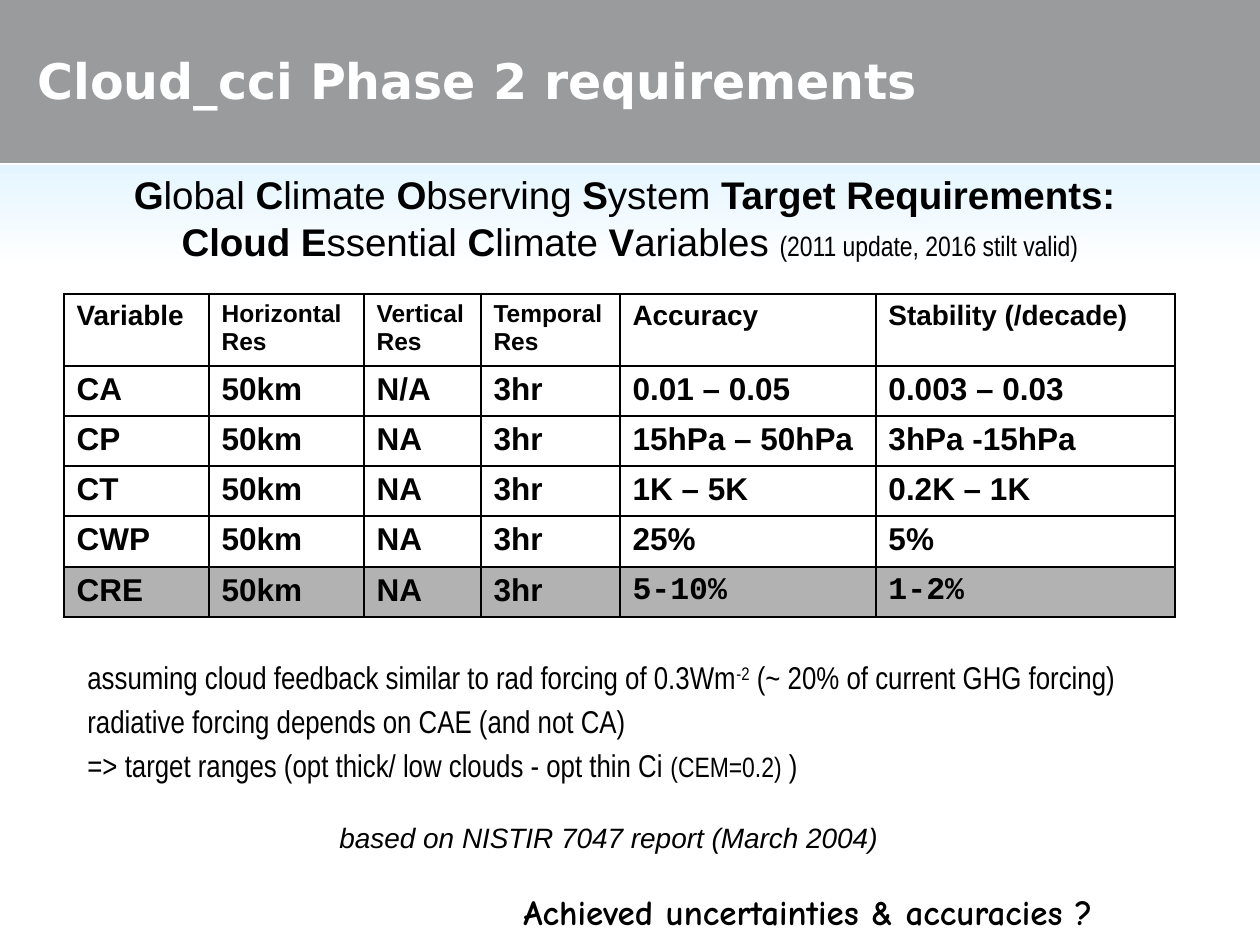
from lxml.etree import SubElement
from pptx import Presentation
from pptx.dml.color import RGBColor
from pptx.enum.shapes import MSO_SHAPE as SHAPE
from pptx.enum.text import MSO_ANCHOR as ANCHOR, PP_ALIGN as ALIGN
from pptx.oxml.ns import qn
from pptx.util import Pt

SCALE = 914400 / 126


def px(*values):
    return [round(v * SCALE) for v in values]


def add_run(p, text, size=18, font="Arial", color="000000", bold=False, italic=False, sup=False):
    r = p.add_run()
    r.text = text
    f = r.font
    f.size, f.name, f.bold, f.italic = Pt(size), font, bold, italic
    f.color.rgb = RGBColor.from_string(color)
    if sup:
        r._r.get_or_add_rPr().set("baseline", "30000")


prs = Presentation()
prs.slide_width, prs.slide_height = px(1260, 945)
s = prs.slides.add_slide(prs.slide_layouts[5])

band = s.shapes.add_shape(SHAPE.RECTANGLE, *px(0, 0, 1260, 163))
band.fill.solid()
band.fill.fore_color.rgb = RGBColor.from_string("9A9B9C")

header = s.shapes.add_shape(SHAPE.RECTANGLE, *px(0, 165, 1260, 105))
header.fill.gradient()
header.fill.gradient_angle = 270
for stop, color in zip(header.fill.gradient_stops, ["E5F5FF", "FFFFFF"]):
    stop.color.rgb = RGBColor.from_string(color)

for sp in (band, header):
    sp.line.fill.background()
    sp.shadow.inherit = False

header_lines = [
    [("G", True), ("lobal ", False), ("C", True), ("limate ", False), ("O", True),
     ("bserving ", False), ("S", True), ("ystem ", False), ("Target Requirements: ", True)],
    [("Cloud E", True), ("ssential ", False), ("C", True), ("limate ", False),
     ("V", True), ("ariables ", False)],
]
tf = header.text_frame
tf.word_wrap = True
tf.vertical_anchor = ANCHOR.MIDDLE
for i, line in enumerate(header_lines):
    p = tf.add_paragraph() if i else tf.paragraphs[0]
    p.alignment = ALIGN.CENTER
    for text, bold in line:
        add_run(p, text, size=22, bold=bold)
add_run(p, "(2011 update, 2016 stilt valid)", size=16, font="Arial Narrow")

title = s.shapes.title
s.shapes._spTree.append(title._element)
title.left, title.top, title.width, title.height = px(25, 44, 1032, 72)
tf = title.text_frame
tf.word_wrap = True
tf.vertical_anchor = ANCHOR.MIDDLE
p = tf.paragraphs[0]
p.alignment = ALIGN.LEFT
add_run(p, "Cloud_cci Phase 2 requirements", size=28, font="DejaVu Sans", color="FFFFFF", bold=True)

rows = [
    ["Variable", "Horizontal Res", "Vertical Res", "Temporal Res", "Accuracy", "Stability (/decade)"],
    ["CA", "50km", "N/A", "3hr", "0.01 – 0.05", "0.003 – 0.03"],
    ["CP", "50km", "NA", "3hr", "15hPa – 50hPa", "3hPa -15hPa"],
    ["CT", "50km", "NA", "3hr", "1K – 5K", "0.2K – 1K"],
    ["CWP", "50km", "NA", "3hr", "25%", "5%"],
    ["CRE", "50km", "NA", "3hr", "5-10%", "1-2%"],
]
col_widths = px(145, 155, 117, 139, 256, 299)
row_heights = px(72, 50, 50, 50, 51, 50)
header_sizes = [16, 14, 14, 14, 16, 16]
table = s.shapes.add_table(len(rows), len(col_widths), *px(64, 294, 1111, 323)).table
table.first_row = table.horz_banding = False
for col, width in zip(table.columns, col_widths):
    col.width = width
for row, height in zip(table.rows, row_heights):
    row.height = height
for i, row in enumerate(rows):
    last = i == len(rows) - 1
    for j, text in enumerate(row):
        cell = table.cell(i, j)
        p = cell.text_frame.paragraphs[0]
        p.alignment = ALIGN.JUSTIFY
        add_run(p, text, size=18 if i else header_sizes[j], bold=True,
                font="Courier New" if last and j > 3 else "Arial")
        tcPr = cell._tc.get_or_add_tcPr()
        for side in ("a:lnL", "a:lnR", "a:lnT", "a:lnB"):
            ln = SubElement(tcPr, qn(side), w=str(Pt(1)))
            SubElement(SubElement(ln, qn("a:solidFill")), qn("a:srgbClr"), val="000000")
        if last:
            cell.fill.solid()
            cell.fill.fore_color.rgb = RGBColor.from_string("B2B2B2")
        else:
            cell.fill.background()

narrow = {"font": "Arial Narrow"}
notes = [
    (0, 0, [("assuming cloud feedback similar to rad forcing of 0.3Wm", narrow),
            ("-2", {"sup": True, **narrow}),
            (" (~ 20% of current GHG forcing)", narrow)]),
    (3.6, 0, [("radiative forcing depends on CAE (and not CA)", narrow)]),
    (3.6, 0, [("=> target ranges (opt thick/ low clouds - opt thin Ci ", narrow),
              ("(CEM=0.2)", {"size": 16, **narrow}),
              (" )", narrow)]),
    (21, 252, [("based on NISTIR 7047 report (March 2004)", {"size": 16, "italic": True})]),
]
tf = s.shapes.add_textbox(*px(75, 652, 1101, 218)).text_frame
tf.word_wrap = True
for i, (before, indent, runs) in enumerate(notes):
    p = tf.add_paragraph() if i else tf.paragraphs[0]
    p.space_before = Pt(before)
    if indent:
        p._p.get_or_add_pPr().set("marL", str(px(indent)[0]))
    for text, fmt in runs:
        add_run(p, text, **fmt)

tf = s.shapes.add_textbox(*px(511, 884, 714, 54)).text_frame
tf.word_wrap = True
add_run(tf.paragraphs[0], "Achieved uncertainties & accuracies ?", size=20, font="Comic Neue", bold=True)

prs.save("out.pptx")
